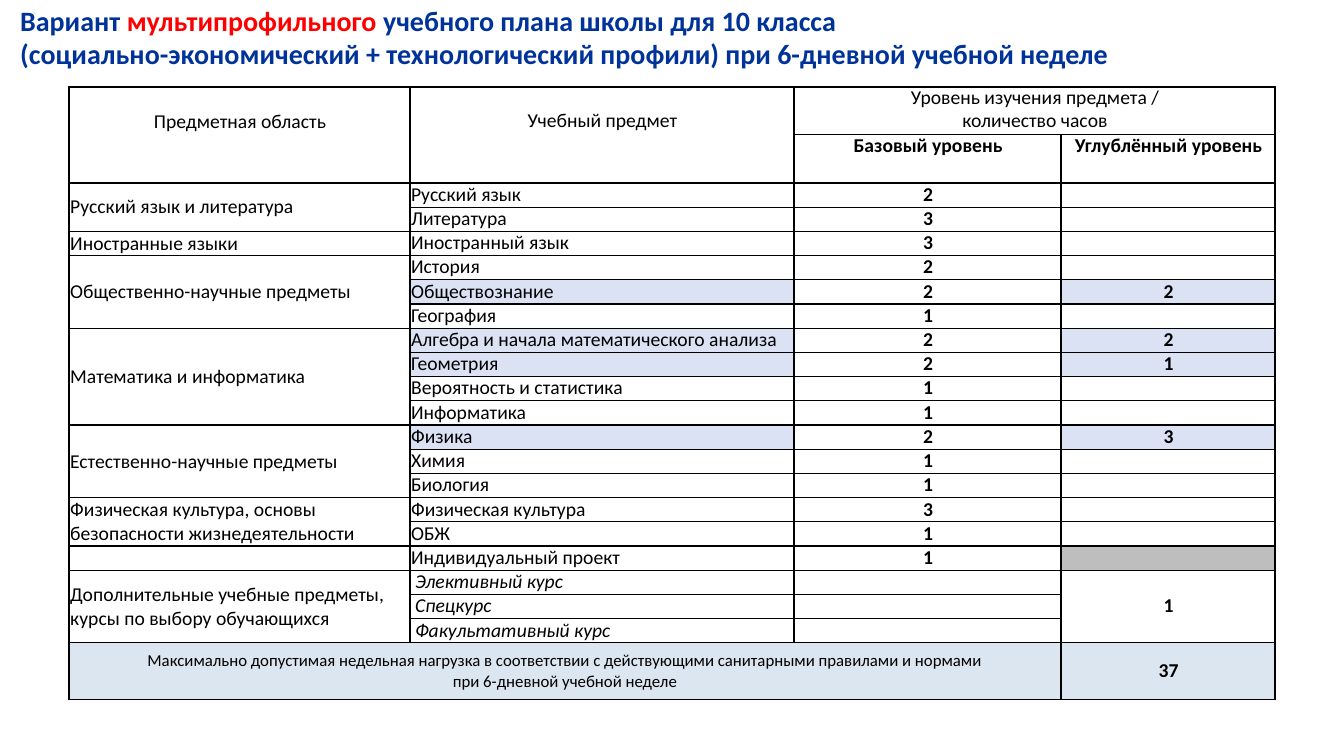
import pptx
import pptx.dml.color
import pptx.enum.text
import pptx.oxml.ns
import pptx.util
from lxml import etree

Cm = pptx.util.Cm
Pt = pptx.util.Pt
qn = pptx.oxml.ns.qn
RGB = pptx.dml.color.RGBColor.from_string
Align = pptx.enum.text.PP_ALIGN
Anchor = pptx.enum.text.MSO_ANCHOR

THEME = {
    "navy": "003399", "red": "FF0000", "ink": "000000",
    "deep": "DAE2F3", "grey": "BEBEBE", "total": "DCE6F0",
    "title": Pt(20), "body": Pt(14), "note": Pt(12),
    "font": "Calibri", "line": Pt(1), "lead": Pt(16.4),
}

HEAD = [
    ["Предметная область", "Учебный предмет",
     "Уровень изучения предмета /\nколичество часов", ""],
    ["", "", "Базовый уровень", "Углублённый уровень"],
]
AREAS = [
    ("Русский язык и литература",
     [("Русский язык", "2", ""), ("Литература", "3", "")]),
    ("Иностранные языки", [("Иностранный язык", "3", "")]),
    ("Общественно-научные предметы",
     [("История", "2", ""), ("Обществознание", "2", "2"), ("География", "1", "")]),
    ("Математика и информатика",
     [("Алгебра и начала математического анализа", "2", "2"),
      ("Геометрия", "2", "1"),
      ("Вероятность и статистика", "1", ""), ("Информатика", "1", "")]),
    ("Естественно-научные предметы",
     [("Физика", "2", "3"), ("Химия", "1", ""), ("Биология", "1", "")]),
    ("Физическая культура, основы\nбезопасности жизнедеятельности",
     [("Физическая культура", "3", ""), ("ОБЖ", "1", "")]),
    ("", [("Индивидуальный проект", "1", "")]),
    ("Дополнительные учебные предметы,\nкурсы по выбору обучающихся",
     [("Элективный курс", "", "1"), ("Спецкурс", "", ""),
      ("Факультативный курс", "", "")]),
]
TOTAL = ["Максимально допустимая недельная нагрузка в соответствии с действующими "
         "санитарными правилами и нормами при 6-дневной учебной неделе", "", "", "37"]


def write(para, text, color, **look):
    """Add a run to the paragraph and format its font."""
    run = para.add_run()
    run.text = text
    run.font.color.rgb = RGB(THEME[color])
    for key, value in {"name": THEME["font"], **look}.items():
        setattr(run.font, key, value)


def border(cell):
    """Draw all four edges of a cell."""
    props = cell._tc.get_or_add_tcPr()
    for place, side in enumerate(("lnL", "lnR", "lnT", "lnB")):
        edge = etree.Element(qn("a:" + side), w=str(THEME["line"]))
        fill = etree.SubElement(edge, qn("a:solidFill"))
        etree.SubElement(fill, qn("a:srgbClr"), val=THEME["ink"])
        props.insert(place, edge)


deck = pptx.Presentation()
deck.slide_width, deck.slide_height = Cm(33.87), Cm(19.05)
slide = deck.slides.add_slide(deck.slide_layouts[6])

# Title
frame = slide.shapes.add_textbox(Cm(0.48), Cm(0.05), Cm(32.74), Cm(1.78)).text_frame
inset = {"margin_left": Cm(0.03), "margin_top": Cm(0.03),
         "margin_right": 0, "margin_bottom": 0, "word_wrap": True}
for key, value in inset.items():
    setattr(frame, key, value)
lines = [
    [("Вариант ", "navy"), ("мультипрофильного ", "red"),
     ("учебного плана школы для 10 класса", "navy")],
    [("(социально-экономический + технологический профили) "
      "при 6-дневной учебной неделе", "navy")],
]
for index, line in enumerate(lines):
    para = frame.add_paragraph() if index else frame.paragraphs[0]
    para.space_before = Pt(0 if index else 1)
    for text, color in line:
        write(para, text, color, size=THEME["title"], bold=True)

# Rows of text, cell fills and merged blocks
rows = list(HEAD)
fills = {}
spans = [(0, 0, 1, 0), (0, 1, 1, 1), (0, 2, 0, 3)]
for area, items in AREAS:
    start = len(rows)
    for subject, base, deep in items:
        if base and deep:
            fills[len(rows), 1] = fills[len(rows), 3] = "deep"
        rows.append(["" if len(rows) > start else area, subject, base, deep])
    if len(items) > 1:
        spans.append((start, 0, len(rows) - 1, 0))
extra = start
fills[extra - 1, 3] = "grey"
last = len(rows)
rows.append(TOTAL)
spans += [(extra, 3, last - 1, 3), (last, 0, last, 2)]
fills.update({(last, col): "total" for col in range(4)})

# Table
widths = [8.59, 9.68, 6.73, 5.39]
heights = [1.2, 1.22] + [0.61] * (last - 2) + [1.42]
table = slide.shapes.add_table(len(rows), 4, Cm(1.74), Cm(2.19),
                               Cm(sum(widths)), Cm(sum(heights))).table
table.first_row = table.horz_banding = False
for col, width in enumerate(widths):
    table.columns[col].width = Cm(width)
for row, height in enumerate(heights):
    table.rows[row].height = Cm(height)

for row, texts in enumerate(rows):
    for col, text in enumerate(texts):
        cell = table.cell(row, col)
        head, note = row < 2, row == last and col == 0
        elect = extra <= row < last and col == 1
        side = 1.9 if note else 0.13 if elect else 0.03
        form = {
            "margin_left": Cm(side), "margin_right": Cm(side if note else 0),
            "margin_top": Cm(0.58 if row == 0 and col < 2 else 0),
            "margin_bottom": 0,
            "vertical_anchor": Anchor.TOP if head else Anchor.MIDDLE,
        }
        for key, value in form.items():
            setattr(cell, key, value)
        if (row, col) in fills:
            cell.fill.solid()
            cell.fill.fore_color.rgb = RGB(THEME[fills[row, col]])
        else:
            cell.fill.background()
        border(cell)
        size = THEME["note" if note else "body"]
        for index, part in enumerate(text.split("\n")):
            para = cell.text_frame.add_paragraph() if index else cell.text_frame.paragraphs[0]
            para.alignment = Align.CENTER if head or note or col > 1 else Align.LEFT
            if col and row < last:
                para.line_spacing = THEME["lead"]
            if part:
                write(para, part, "ink", size=size,
                      bold=col > 1 and row > 0, italic=elect)
            else:
                etree.SubElement(para._p, qn("a:endParaRPr"), sz="1200")

for top, left, bottom, right in spans:
    table.cell(top, left).merge(table.cell(bottom, right))

deck.save("out.pptx")
